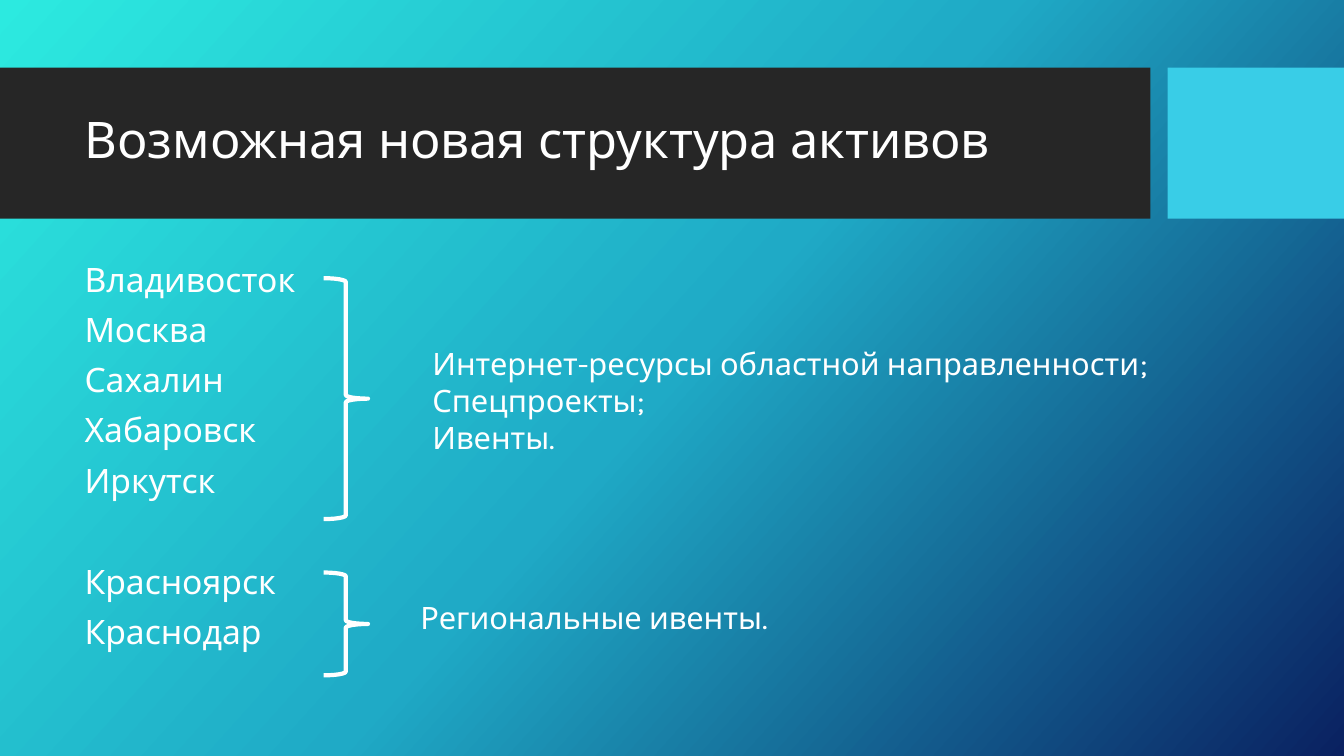
from copy import deepcopy

from pptx import Presentation
from pptx.dml.color import RGBColor
from pptx.enum.shapes import MSO_SHAPE
from pptx.enum.text import MSO_ANCHOR
from pptx.oxml.ns import qn
from pptx.util import Inches, Pt

RECTANGLE = MSO_SHAPE.RECTANGLE
RIGHT_BRACE = MSO_SHAPE.RIGHT_BRACE
TOP = MSO_ANCHOR.TOP
MIDDLE = MSO_ANCHOR.MIDDLE

FONT = "Karla"
WHITE = "FFFFFF"
DARK = "262626"
ACCENT = "39CDE7"
GRADIENT = [(0, "2CEAE0"), (0.5, "1FAAC6"), (1, "0A2161")]
GRADIENT_ANGLE = 360 - 42

TITLE = "Возможная новая структура активов"
CITY_GROUPS = [
    (2.56, 2.6, ["Владивосток", "Москва", "Сахалин", "Хабаровск", "Иркутск"]),
    (5.56, 1.2, ["Красноярск", "Краснодар"]),
]
BRACES = [(2.76, 2.39), (5.68, 1.02)]
ASSETS = [
    (4.19, 3.32, 1.28, ["Интернет-ресурсы областной направленности;", "Спецпроекты;", "Ивенты."]),
    (4.07, 5.84, 0.7, ["Региональные ивенты."]),
]


def color(value):
    """Return the colour for a hex string."""
    return RGBColor.from_string(value)


def set_background(slide):
    """Fill the slide background with the three-stop gradient."""
    fill = slide.background.fill
    fill.gradient()
    fill.gradient_angle = GRADIENT_ANGLE
    stop_list = slide.element.find(".//" + qn("a:gsLst"))
    stop_list.insert(1, deepcopy(stop_list[0]))
    for stop, (position, value) in zip(fill.gradient_stops, GRADIENT):
        stop.position = position
        stop.color.rgb = color(value)


def add_band(slide, left, width, fill):
    """Add one block of the title band."""
    shape = slide.shapes.add_shape(
        RECTANGLE, Inches(left), Inches(0.67), Inches(width), Inches(1.5))
    shape.shadow.inherit = False
    shape.fill.solid()
    shape.fill.fore_color.rgb = color(fill)
    shape.line.fill.background()


def add_brace(slide, top, height):
    """Add a white brace to the right of a city group."""
    shape = slide.shapes.add_shape(
        RIGHT_BRACE, Inches(3.21), Inches(top), Inches(0.44), Inches(height))
    shape.shadow.inherit = False
    shape.fill.background()
    shape.line.color.rgb = color(WHITE)
    shape.line.width = Pt(3)


def add_text(slide, box, lines, size, spacing=1.0, gap=0, margin=0.05, anchor=TOP):
    """Add a text box with one paragraph for each line."""
    shape = slide.shapes.add_textbox(*[Inches(length) for length in box])
    text_frame = shape.text_frame
    text_frame.word_wrap = True
    text_frame.vertical_anchor = anchor
    text_frame.margin_top = text_frame.margin_bottom = Inches(margin)
    text_frame.text = "\n".join(lines)
    for index, paragraph in enumerate(text_frame.paragraphs):
        paragraph.line_spacing = spacing
        paragraph.space_before = Pt(gap if index else 0)
        for run in paragraph.runs:
            run.font.name = FONT
            run.font.size = Pt(size)
            run.font.color.rgb = color(WHITE)


def main():
    """Build the slide and save it."""
    presentation = Presentation()
    presentation.slide_width = Inches(13.33)
    presentation.slide_height = Inches(7.5)
    slide = presentation.slides.add_slide(presentation.slide_layouts[6])
    set_background(slide)
    add_band(slide, 0, 11.41, DARK)
    add_band(slide, 11.58, 1.75, ACCENT)
    add_text(slide, (0.74, 0.82, 10.51, 1.18), [TITLE], 36, spacing=0.9, anchor=MIDDLE)
    for top, height, cities in CITY_GROUPS:
        add_text(slide, (0.74, top, 2.63, height), cities, 24, spacing=0.9, gap=10)
    for top, height in BRACES:
        add_brace(slide, top, height)
    for left, top, height, lines in ASSETS:
        add_text(slide, (left, top, 7.95, height), lines, 22, margin=0.1)
    presentation.save("out.pptx")


if __name__ == "__main__":
    main()
